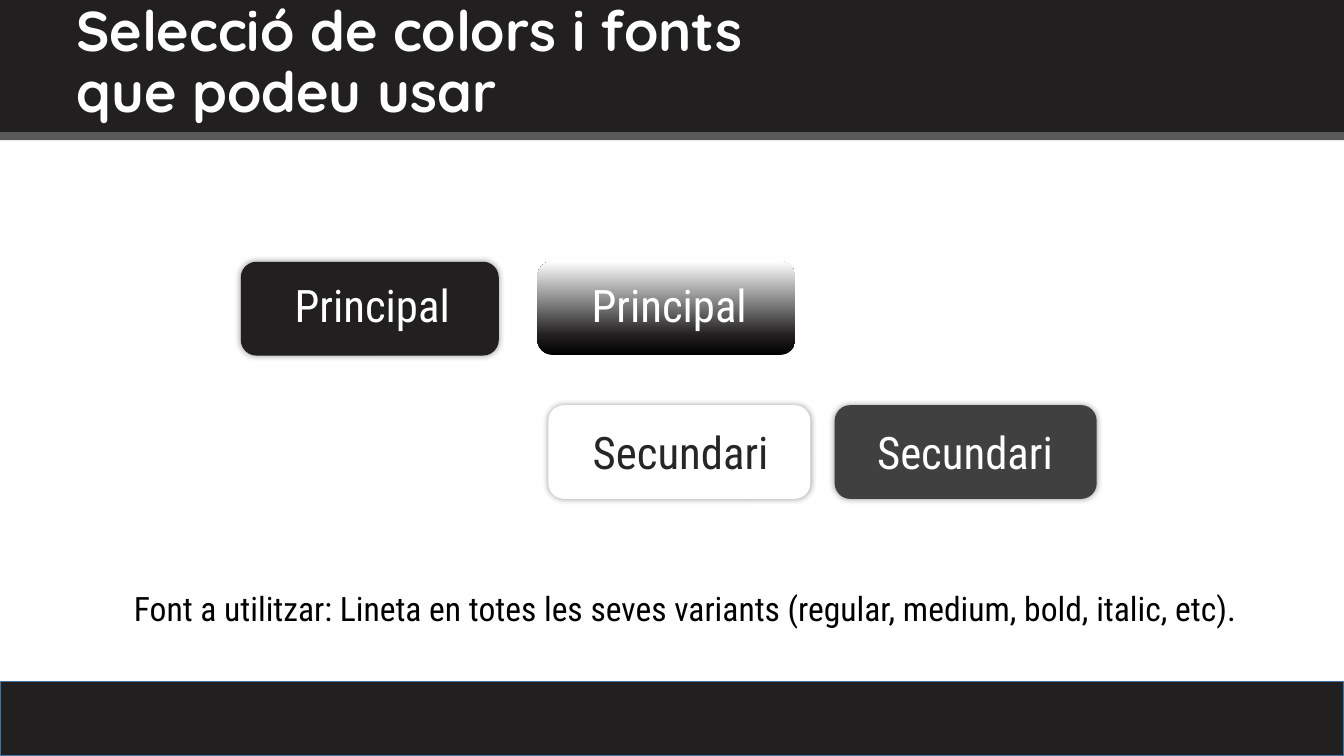
from copy import deepcopy

from lxml import etree
from pptx import Presentation
from pptx.dml.color import RGBColor
from pptx.enum.shapes import MSO_SHAPE
from pptx.enum.text import MSO_ANCHOR, MSO_AUTO_SIZE, PP_ALIGN
from pptx.oxml.ns import qn
from pptx.util import Pt

RECTANGLE = MSO_SHAPE.RECTANGLE
ROUNDED = MSO_SHAPE.ROUNDED_RECTANGLE
LEFT, CENTER = PP_ALIGN.LEFT, PP_ALIGN.CENTER
MIDDLE = MSO_ANCHOR.MIDDLE
NO_FIT, GROW = MSO_AUTO_SIZE.NONE, MSO_AUTO_SIZE.SHAPE_TO_FIT_TEXT

BLACK = RGBColor(0x00, 0x00, 0x00)
WHITE = RGBColor(0xFF, 0xFF, 0xFF)
INK = RGBColor(0x21, 0x1F, 0x20)
TEXT_DARK = RGBColor(0x26, 0x26, 0x26)
DARK_GRAY = RGBColor(0x40, 0x40, 0x40)
MID_GRAY = RGBColor(0x59, 0x59, 0x59)
BLUE = RGBColor(0x43, 0x73, 0x9E)

HEADING_FONT = "Quicksand"
BODY_FONT = "Roboto Condensed"
WIDTH, HEIGHT = 960, 540

TITLE = "Selecció de colors i fonts que podeu usar"
TITLE_BOX = (47.5, -6.5, 564.5, 104.4)
NOTE = "Font a utilitzar: Lineta en totes les seves variants (regular, medium, bold, italic, etc)."
NOTE_BOX = (72.7, 416.2, 833.8, 36)

BANDS = [
    (RECTANGLE, (0, 486.7, WIDTH, 53.3), INK, BLUE),
    (RECTANGLE, (-7.2, -5, 976.3, 99.4), INK, None),
    (ROUNDED, (-33.1, 94.3, 1048.3, 5.8), MID_GRAY, None),
]

GRADIENT = [(0, BLACK), (0.21, INK), (1, WHITE)]
SWATCH_HEIGHT = 67
LABEL_HEIGHT = 46
SWATCHES = [
    ("Principal", (172, 187, 184.3), (198.7, 195.1, 134.6), INK, WHITE),
    ("Secundari", (596.2, 289.4, 187.2), (616.3, 299.5, 146.2), DARK_GRAY, WHITE),
    ("Secundari", (391.7, 289.4, 187.2), (411.8, 299.5, 149), WHITE, TEXT_DARK),
    ("Principal", (383.8, 186.6, 184.3), (410.4, 195.1, 135.4), GRADIENT, WHITE),
]


def add_block(slide, kind, box, color, line=None):
    block = slide.shapes.add_shape(kind, *map(Pt, box))
    block.shadow.inherit = False
    if isinstance(color, list):
        apply_gradient(block.fill, color)
    else:
        block.fill.solid()
        block.fill.fore_color.rgb = color
    if line is None:
        block.line.fill.background()
    else:
        block.line.color.rgb = line
        block.line.width = Pt(1)
    return block


def apply_gradient(fill, stops):
    fill.gradient()
    fill.gradient_angle = 90
    stop_list = fill._fill._gradFill.find(qn("a:gsLst"))
    while len(stop_list) < len(stops):
        stop_list.append(deepcopy(stop_list[0]))
    for stop, (position, color) in zip(fill.gradient_stops, stops):
        stop.position = position
        stop.color.rgb = color


def add_glow_shadow(shape):
    effects = shape._element.spPr.find(qn("a:effectLst"))
    shadow = etree.SubElement(
        effects, qn("a:outerShdw"), blurRad=str(Pt(5)), dist="0", dir="0", rotWithShape="0"
    )
    color = etree.SubElement(shadow, qn("a:srgbClr"), val=str(BLACK))
    etree.SubElement(color, qn("a:alpha"), val="40000")


def write_text(shape, text, size, font_name, color, alignment, bold=False):
    frame = shape.text_frame
    frame.word_wrap = True
    frame.text = text
    paragraph = frame.paragraphs[0]
    paragraph.alignment = alignment
    font = paragraph.runs[0].font
    font.name = font_name
    font.size = Pt(size)
    font.bold = bold
    font.color.rgb = color


def add_label(slide, box, text, size, color):
    label = slide.shapes.add_textbox(*map(Pt, box))
    write_text(label, text, size, BODY_FONT, color, CENTER)
    label.text_frame.auto_size = GROW


def place_title(slide):
    title = slide.shapes.title
    title.left, title.top, title.width, title.height = map(Pt, TITLE_BOX)
    write_text(title, TITLE, 40, HEADING_FONT, WHITE, LEFT, bold=True)
    title.text_frame.auto_size = NO_FIT
    title.text_frame.vertical_anchor = MIDDLE
    title.text_frame.paragraphs[0].line_spacing = 0.9
    slide.shapes._spTree.append(title._element)


def main():
    presentation = Presentation()
    presentation.slide_width, presentation.slide_height = Pt(WIDTH), Pt(HEIGHT)
    slide = presentation.slides.add_slide(presentation.slide_layouts[5])
    slide.background.fill.solid()
    slide.background.fill.fore_color.rgb = WHITE

    for band in BANDS:
        add_block(slide, *band)
    for text, swatch_box, label_box, color, text_color in SWATCHES:
        swatch = add_block(slide, ROUNDED, (*swatch_box, SWATCH_HEIGHT), color)
        if color is not GRADIENT:
            add_glow_shadow(swatch)
        add_label(slide, (*label_box, LABEL_HEIGHT), text, 32, text_color)
    place_title(slide)
    add_label(slide, NOTE_BOX, NOTE, 24, BLACK)
    presentation.save("out.pptx")


if __name__ == "__main__":
    main()
